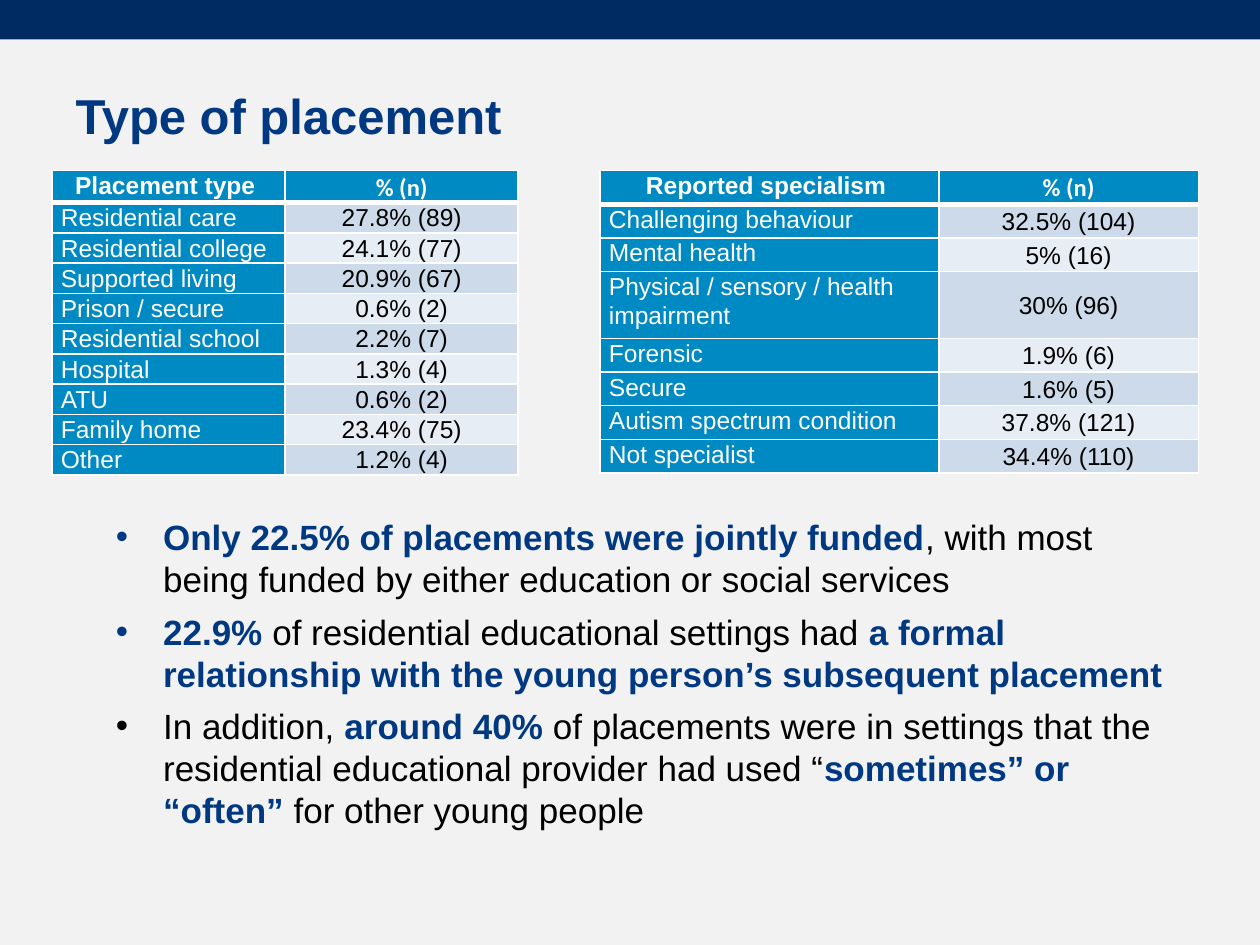
from lxml import etree
from pptx import Presentation
from pptx.dml.color import RGBColor
from pptx.enum.shapes import MSO_SHAPE
from pptx.enum.text import MSO_ANCHOR, MSO_AUTO_SIZE, PP_ALIGN
from pptx.oxml.ns import qn
from pptx.util import Pt

RECTANGLE = MSO_SHAPE.RECTANGLE
TOP, MIDDLE = MSO_ANCHOR.TOP, MSO_ANCHOR.MIDDLE
LEFT, CENTER = PP_ALIGN.LEFT, PP_ALIGN.CENTER
NO_AUTOFIT = MSO_AUTO_SIZE.NONE

BACKGROUND, BAR, NAVY, BLUE = "F2F2F2", "002A62", "003882", "008AC4"
BANDS = ("CCDAEA", "E7EDF5")
WHITE, BLACK = "FFFFFF", "000000"

PLACEMENTS = [
    ("Placement type ", "% (n)"),
    ("Residential care", "27.8% (89)"),
    ("Residential college", "24.1% (77)"),
    ("Supported living", "20.9% (67)"),
    ("Prison / secure", "0.6% (2)"),
    ("Residential school", "2.2% (7)"),
    ("Hospital", "1.3% (4)"),
    ("ATU", "0.6% (2)"),
    ("Family home", "23.4% (75)"),
    ("Other", "1.2% (4)"),
]
SPECIALISMS = [
    ("Reported specialism ", "% (n)"),
    ("Challenging behaviour", "32.5% (104)"),
    ("Mental health", "5% (16)"),
    ("Physical / sensory / health impairment", "30% (96)"),
    ("Forensic", "1.9% (6)"),
    ("Secure", "1.6% (5)"),
    ("Autism spectrum condition", "37.8% (121)"),
    ("Not specialist", "34.4% (110)"),
]
FINDINGS = [
    [("Only 22.5% of placements were jointly funded", True),
     (", with most being funded by either education or social services", False)],
    [("22.9% ", True),
     ("of residential educational settings had ", False),
     ("a formal relationship with the young person’s subsequent placement", True)],
    [("In addition, ", False),
     ("around 40% ", True),
     ("of placements were in settings that the residential educational provider had used “", False),
     ("sometimes” or “often” ", True),
     ("for other young people", False)],
]


def color(value):
    """Turn a hex string into a colour."""
    return RGBColor.from_string(value)


def place(shape, box):
    """Move a shape to a box of left, top, width and height in points."""
    shape.left, shape.top, shape.width, shape.height = map(Pt, box)


def add_run(paragraph, text, size, fill, bold=False, name="Arial"):
    """Add one formatted run to a paragraph."""
    run = paragraph.add_run()
    run.text = text
    run.font.size = Pt(size)
    run.font.name = name
    run.font.bold = bold
    run.font.color.rgb = color(fill)


def add_bar(slide, box):
    """Draw the dark bar across the top."""
    bar = slide.shapes.add_shape(RECTANGLE, *map(Pt, box))
    bar.shadow.inherit = False
    bar.fill.solid()
    bar.fill.fore_color.rgb = color(BAR)
    bar.line.fill.background()


def fill_title(slide, box, text):
    """Place and fill the title."""
    title = slide.shapes.title
    place(title, box)
    frame = title.text_frame
    frame.auto_size = NO_AUTOFIT
    frame.vertical_anchor = MIDDLE
    paragraph = frame.paragraphs[0]
    paragraph.alignment = LEFT
    add_run(paragraph, text, 28, NAVY, True)


def add_borders(cell, top, bottom):
    """Give a cell white borders, with top and bottom widths in points."""
    properties = cell._tc.get_or_add_tcPr()
    for side, width in (("L", 1), ("R", 1), ("T", top), ("B", bottom)):
        line = etree.SubElement(properties, qn(f"a:ln{side}"), w=str(Pt(width)))
        fill = etree.SubElement(line, qn("a:solidFill"))
        etree.SubElement(fill, qn("a:srgbClr"), val=WHITE)


def fill_cell(cell, text, row, column, value_anchor):
    """Format one table cell according to its row and column."""
    header, label = row == 0, column == 0
    add_borders(cell, 3 if row == 1 else 1, 3 if header else 1)
    cell.fill.solid()
    cell.fill.fore_color.rgb = color(BLUE if header or label else BANDS[(row - 1) % 2])
    cell.margin_left = cell.margin_right = Pt(5)
    cell.margin_top = cell.margin_bottom = Pt(0)
    cell.vertical_anchor = TOP if header or label else value_anchor
    paragraph = cell.text_frame.paragraphs[0]
    paragraph.alignment = CENTER if header or not label else LEFT
    paragraph.line_spacing = 1.07
    add_run(paragraph, text, 14, WHITE if header or label else BLACK, header,
            "Calibri" if header and not label else "Arial")


def add_data_table(slide, left, top, widths, heights, rows, value_anchor):
    """Add a table with a header row and a label column."""
    size = Pt(sum(widths)), Pt(sum(heights))
    table = slide.shapes.add_table(len(rows), len(widths), Pt(left), Pt(top), *size).table
    for column, width in zip(table.columns, widths):
        column.width = Pt(width)
    for table_row, height in zip(table.rows, heights):
        table_row.height = Pt(height)
    for row, texts in enumerate(rows):
        for column, text in enumerate(texts):
            fill_cell(table.cell(row, column), text, row, column, value_anchor)


def fill_findings(slide, box, findings):
    """Place the body and fill it with bulleted findings."""
    body = slide.placeholders[1]
    place(body, box)
    frame = body.text_frame
    frame.auto_size = NO_AUTOFIT
    for index, runs in enumerate(findings):
        paragraph = frame.add_paragraph() if index else frame.paragraphs[0]
        properties = paragraph._p.get_or_add_pPr()
        properties.set("marL", str(Pt(27)))
        properties.set("indent", str(Pt(-27)))
        etree.SubElement(properties, qn("a:buFont"), typeface="Arial")
        etree.SubElement(properties, qn("a:buChar"), char="•")
        paragraph.space_before = Pt(6 if index else 0)
        for text, strong in runs:
            add_run(paragraph, text, 20, NAVY if strong else BLACK, strong)


def main():
    """Build and save the slide."""
    presentation = Presentation()
    presentation.slide_width, presentation.slide_height = Pt(720), Pt(540)
    slide = presentation.slides.add_slide(presentation.slide_layouts[1])
    slide.background.fill.solid()
    slide.background.fill.fore_color.rgb = color(BACKGROUND)
    add_bar(slide, (0, 0, 720, 22.5))
    fill_title(slide, (36, 43.2, 653, 45.4), "Type of placement")
    add_data_table(slide, 29.8, 97.5, (133.2, 133.2), [17.3] * 10, PLACEMENTS, TOP)
    heights = [19.2] * 3 + [38.4] + [19.2] * 4
    add_data_table(slide, 343, 97.5, (193.5, 148.3), heights, SPECIALISMS, MIDDLE)
    fill_findings(slide, (59, 291, 618, 191.5), FINDINGS)
    presentation.save("out.pptx")


if __name__ == "__main__":
    main()
